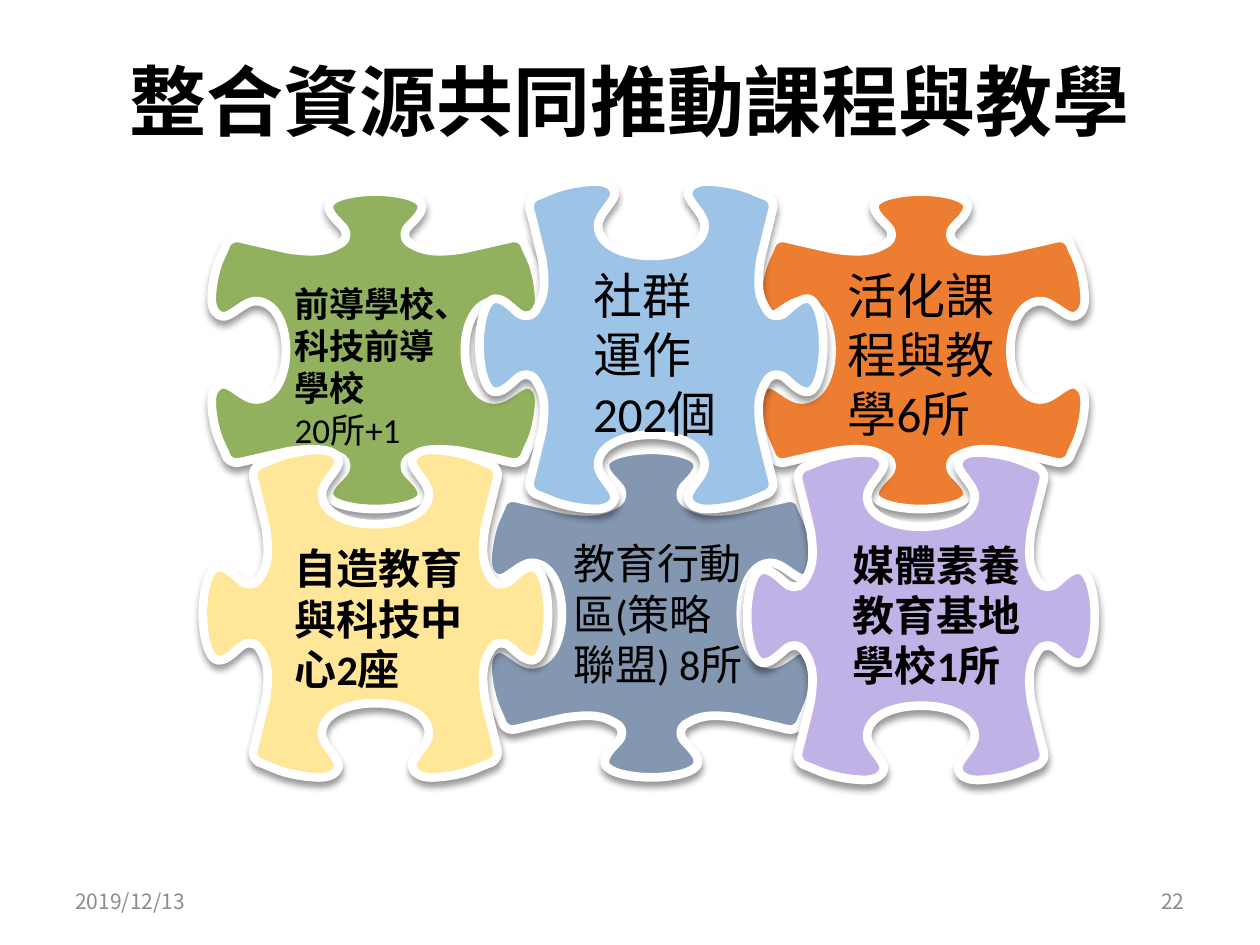
"""Build a slide of six interlocking puzzle pieces with labels."""
from dataclasses import dataclass

from lxml.etree import SubElement
from pptx import Presentation
from pptx.dml.color import RGBColor
from pptx.enum.text import MSO_ANCHOR, MSO_AUTO_SIZE, PP_ALIGN
from pptx.oxml.ns import qn
from pptx.util import Inches, Pt


@dataclass(frozen=True)
class Theme:
    ink: str = "000000"
    muted: str = "8C8C8C"
    edge: str = "FFFFFF"
    orange: str = "ED7D31"
    green: str = "91B15F"
    slate: str = "8497B0"
    yellow: str = "FFE699"
    purple: str = "C0B2E6"
    blue: str = "9DC3E6"
    latin: str = "Calibri"
    sans: str = "Arial"
    asian: str = "Noto Sans CJK SC"
    title: int = 44
    large: int = 28
    medium: int = 24
    small: int = 20
    foot: int = 12
    border: int = 5


WIDTH, HEIGHT = 2.6, 2.52
QUARTER = [
    (0, -1.26),
    (.17, -1.26), (.36, -1.22), (.37, -1.15),
    (.38, -1.07), (.25, -.99), (.24, -.95),
    (.22, -.89), (.25, -.86), (.29, -.84),
    (.38, -.79), (.46, -.77), (.68, -.8),
    (.82, -.83), (.95, -.86), (1.08, -.89),
    (1.12, -.9), (1.16, -.88), (1.18, -.85),
    (1.21, -.77), (1.25, -.71), (1.27, -.62),
    (1.29, -.55), (1.3, -.45), (1.3, -.41),
    (1.3, -.32), (1.26, -.28), (1.22, -.27),
    (1.15, -.25), (1.04, -.4), (.94, -.39),
    (.79, -.38), (.71, -.2), (.71, 0),
]
HALF = QUARTER + [(x, -y) for x, y in QUARTER[-2::-1]]
OUTLINE = HALF + [(-x, y) for x, y in HALF[-2::-1]]


class Deck:
    def __init__(self, theme):
        self.theme = theme
        self.show = Presentation()
        self.show.slide_width = Inches(10)
        self.show.slide_height = Inches(7.5)
        self.slide = self.show.slides.add_slide(self.show.slide_layouts[6])

    def piece(self, x, y, color, height=HEIGHT, turn=0):
        scale = height / HEIGHT
        dots = [(Inches(x + dx), Inches(y + dy * scale)) for dx, dy in OUTLINE]
        maker = self.slide.shapes.build_freeform(*dots[0])
        maker.add_line_segments(dots[1:], close=True)
        shape = maker.convert_to_shape()
        self.curve(shape)
        shape.rotation = turn
        shape.fill.solid()
        shape.fill.fore_color.rgb = RGBColor.from_string(color)
        shape.line.color.rgb = RGBColor.from_string(self.theme.edge)
        shape.line.width = Pt(self.theme.border)
        self.shade(shape)

    def curve(self, shape):
        path = next(shape._element.iter(qn("a:path")))
        lines = path.findall(qn("a:lnTo"))
        for i in range(0, len(lines), 3):
            bend = path.makeelement(qn("a:cubicBezTo"))
            lines[i].addprevious(bend)
            for line in lines[i:i + 3]:
                bend.append(line[0])
                path.remove(line)

    def shade(self, shape):
        shape.shadow.inherit = False
        effects = next(shape._element.iter(qn("a:effectLst")))
        values = {"blurRad": Pt(4), "dist": Pt(3), "dir": 90 * 60000, "rotWithShape": 0}
        outer = SubElement(effects, qn("a:outerShdw"),
                           {key: str(int(value)) for key, value in values.items()})
        tint = SubElement(outer, qn("a:srgbClr"), val=self.theme.ink)
        SubElement(tint, qn("a:alpha"), val="40000")

    def text(self, box, parts, align=PP_ALIGN.LEFT, anchor=MSO_ANCHOR.TOP,
             fit=MSO_AUTO_SIZE.NONE):
        frame = self.slide.shapes.add_textbox(*map(Inches, box)).text_frame
        form = {"word_wrap": True, "auto_size": fit, "vertical_anchor": anchor}
        for key, value in form.items():
            setattr(frame, key, value)
        for i, (words, size, bold, face, color) in enumerate(parts):
            para = frame.add_paragraph() if i else frame.paragraphs[0]
            para.alignment = align
            run = para.add_run()
            run.text = words
            style = {"size": Pt(size), "bold": bold, "name": face}
            for key, value in style.items():
                setattr(run.font, key, value)
            run.font.color.rgb = RGBColor.from_string(color)
            latin = next(run._r.iter(qn("a:latin")))
            asian = latin.makeelement(qn("a:ea"), {"typeface": self.theme.asian})
            latin.addnext(asian)

    def label(self, box, *lines):
        parts = [(words, size, bold, face, self.theme.ink)
                 for words, size, bold, face in lines]
        self.text(box, parts, fit=MSO_AUTO_SIZE.SHAPE_TO_FIT_TEXT)

    def plain(self, box, words, size, color, align, bold=False):
        self.text(box, [(words, size, bold, self.theme.asian, color)],
                  align, MSO_ANCHOR.MIDDLE)


def main():
    theme = Theme()
    deck = Deck(theme)
    deck.plain((.5, .36, 9, .87), "整合資源共同推動課程與教學",
               theme.title, theme.ink, PP_ALIGN.CENTER, True)
    deck.plain((.5, 6.95, 2.33, .4), "2019/12/13",
               theme.foot, theme.muted, PP_ALIGN.LEFT)
    deck.plain((7.17, 6.95, 2.33, .4), "22",
               theme.foot, theme.muted, PP_ALIGN.RIGHT)

    left, center, right = 2.98, 5.17, 7.31
    deck.piece(right, 2.78, theme.orange)
    deck.piece(left, 2.78, theme.green)
    deck.piece(center, 4.87, theme.slate, 2.6)
    deck.piece(left, 4.87, theme.yellow, 2.74, 270)
    deck.piece(right, 4.89, theme.purple, 2.76, 270)
    deck.piece(center, 2.74, theme.blue, 2.73, 270)

    face, large, medium, small = theme.latin, theme.large, theme.medium, theme.small
    deck.label((2.24, 2.19, 1.5, 1.45),
               ("前導學校、科技前導學校", small, True, theme.sans),
               ("20所+1", small, False, face))
    deck.label((4.61, 2.06, 1.33, 1.51),
               ("社群運作", large, False, face), ("202個", large, False, face))
    deck.label((6.63, 2.06, 1.59, 1.51), ("活化課程與教學6所", large, False, face))
    deck.label((2.24, 4.26, 1.56, 1.31), ("自造教育與科技中心2座", medium, True, face))
    deck.label((4.45, 4.22, 1.56, 1.31), ("教育行動區(策略聯盟) 8所", medium, False, face))
    deck.label((6.67, 4.23, 1.72, 1.31), ("媒體素養教育基地學校1所", medium, True, face))
    deck.show.save("out.pptx")


if __name__ == "__main__":
    main()
